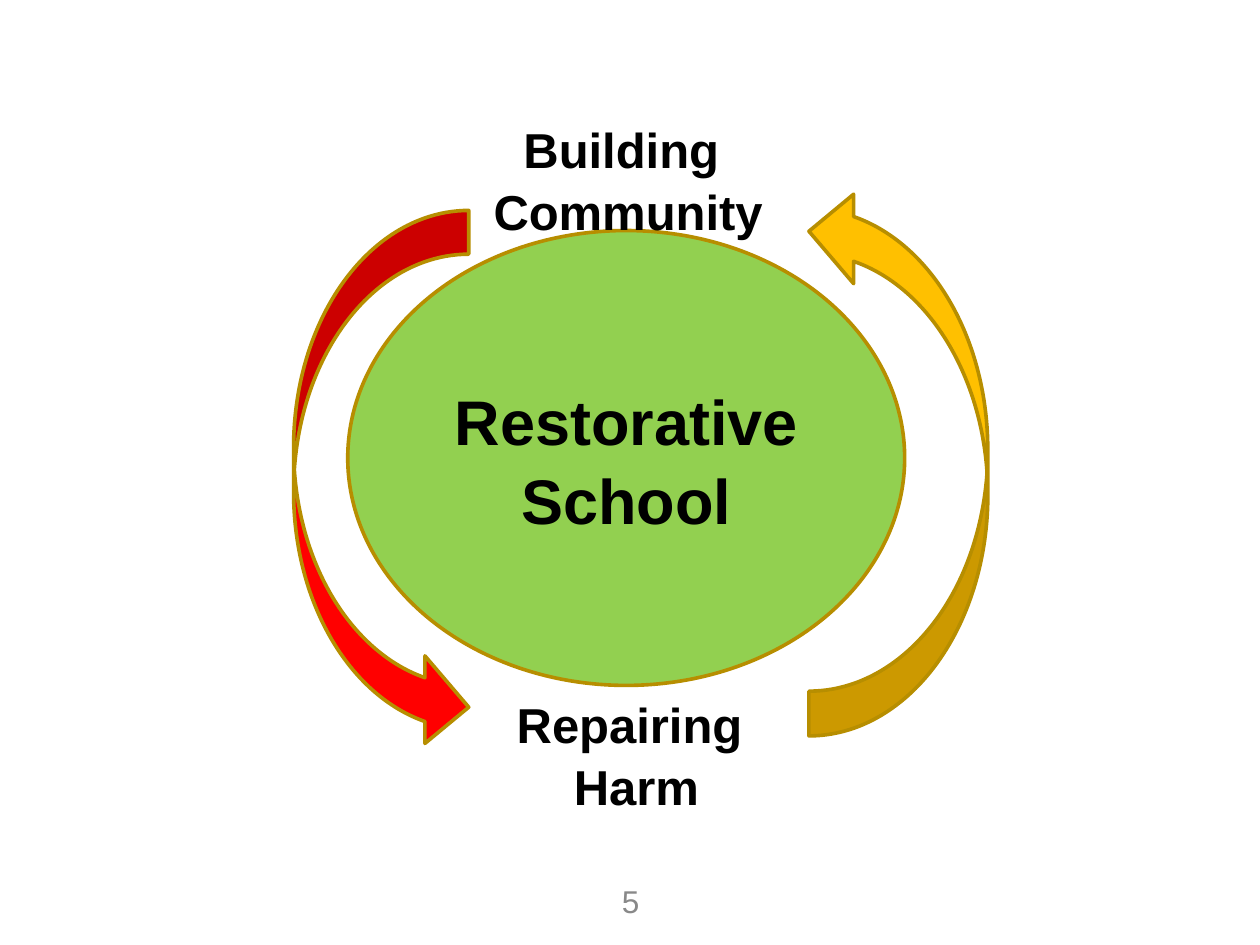
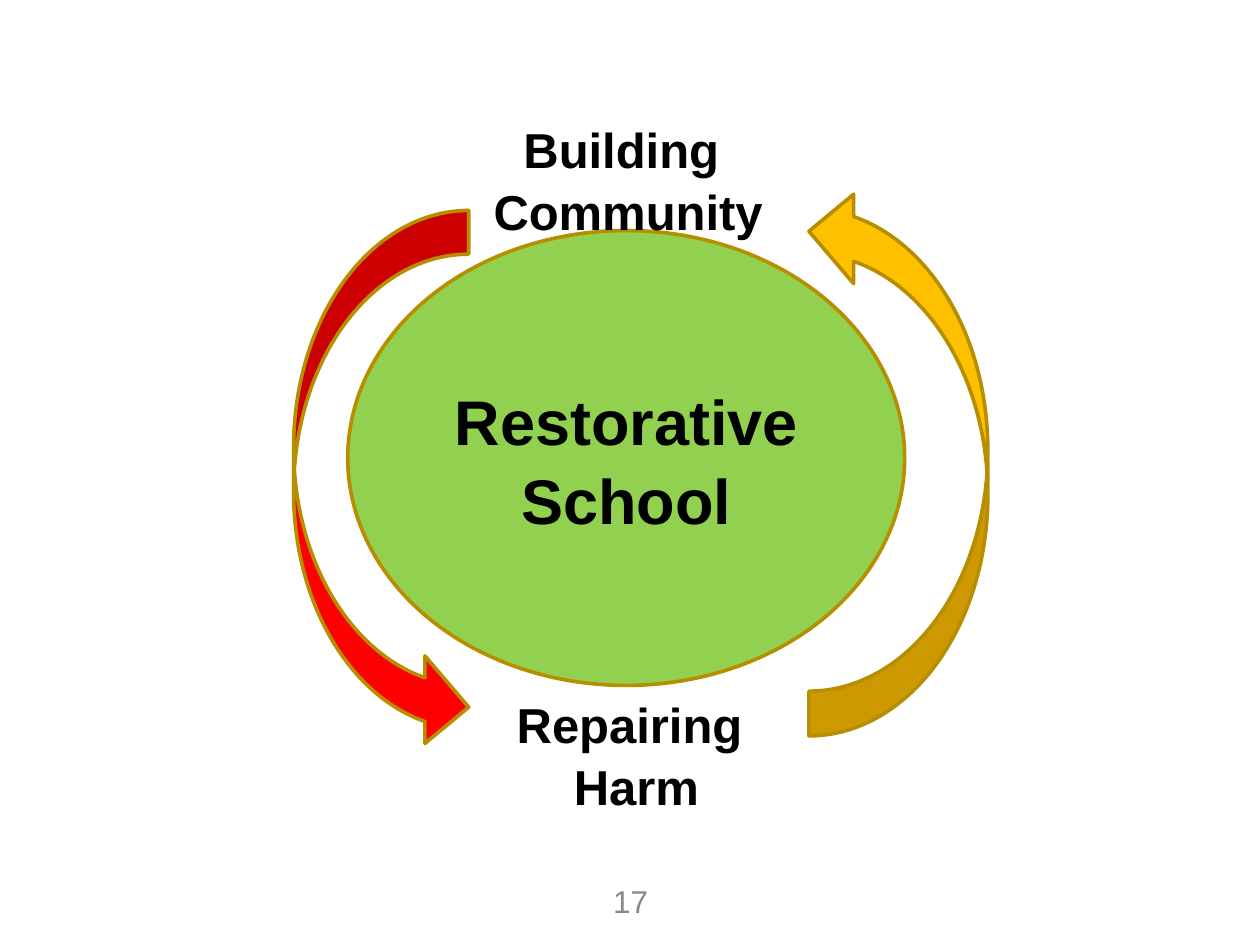
from pptx import Presentation
from pptx.dml.color import RGBColor
from pptx.enum.shapes import MSO_SHAPE as Shape
from pptx.enum.text import MSO_ANCHOR as Anchor, MSO_AUTO_SIZE as AutoSize, PP_ALIGN as Align
from pptx.util import Inches, Pt

FONT = "Arial"
BLACK, GRAY = "000000", "898989"
GREEN, RED, AMBER, OUTLINE = "92D050", "FF0000", "FFC000", "B78E00"
BLANK_LAYOUT = 6
PAGE_NUMBERS = ("5", "17")

# Boxes: left, top, width, height in inches
CYCLE_BOX = (2.33, 0.88, 5.51, 5.6)
NUMBER_BOX = (3.42, 6.95, 3.17, 0.4)


def color(hex_string):
    return RGBColor.from_string(hex_string)


def write(frame, text, size, hex_color, bold=False, spacing=None):
    """Fill a text frame with centred paragraphs, one per line of text."""
    frame.text = text
    for paragraph in frame.paragraphs:
        paragraph.alignment = Align.CENTER
        paragraph.line_spacing = spacing
        for run in paragraph.runs:
            run.font.name = FONT
            run.font.size = Pt(size)
            run.font.bold = bold
            run.font.color.rgb = color(hex_color)


def add_outlined(slide, kind, box, fill):
    """Add a filled preset shape with the shared gold outline."""
    figure = slide.shapes.add_shape(kind, *map(Inches, box))
    figure.shadow.inherit = False
    figure.fill.solid()
    figure.fill.fore_color.rgb = color(fill)
    figure.line.color.rgb = color(OUTLINE)
    figure.line.width = Pt(2.08)
    return figure


def add_label(slide, box, text, wrap=True):
    label = slide.shapes.add_textbox(*map(Inches, box))
    frame = label.text_frame
    frame.word_wrap = wrap
    frame.auto_size = AutoSize.SHAPE_TO_FIT_TEXT
    write(frame, text, 28, BLACK, bold=True, spacing=1.05)


def add_cycle(slide, box):
    """Draw the school circle, its two arrows and the two practices."""
    left, top, width, height = box
    label_height = 1.04

    # Centre
    school = add_outlined(slide, Shape.OVAL, (left + 0.43, top + 0.95, 4.42, 3.61), GREEN)
    school.text_frame.word_wrap = True
    school.text_frame.vertical_anchor = Anchor.MIDDLE
    write(school.text_frame, "Restorative School", 36, BLACK, bold=True, spacing=1.05)

    # Downward arrow on the left edge
    add_outlined(slide, Shape.CURVED_RIGHT_ARROW, (left, top + 0.79, 1.39, 4.29), RED)

    # Practices above and below
    add_label(slide, (left + 0.84, top, 3.63, label_height), "Building \nCommunity")
    add_label(slide, (left + 1.66, top + height - label_height, 2.12, label_height),
              "Repairing \nHarm", wrap=False)

    # Upward arrow on the right edge, turned about its centre
    length, depth = 4.36, 1.42
    center_x, center_y = left + width - depth / 2, top + 2.78
    rising = add_outlined(slide, Shape.CURVED_UP_ARROW,
                          (center_x - length / 2, center_y - depth / 2, length, depth), AMBER)
    rising.rotation = 270


def add_page_number(slide, box, number):
    footer = slide.shapes.add_textbox(*map(Inches, box))
    footer.text_frame.word_wrap = True
    write(footer.text_frame, number, 18, GRAY)


def main():
    deck = Presentation()
    deck.slide_width, deck.slide_height = Inches(10), Inches(7.5)
    for number in PAGE_NUMBERS:
        slide = deck.slides.add_slide(deck.slide_layouts[BLANK_LAYOUT])
        add_page_number(slide, NUMBER_BOX, number)
        add_cycle(slide, CYCLE_BOX)
    deck.save("out.pptx")


if __name__ == "__main__":
    main()
